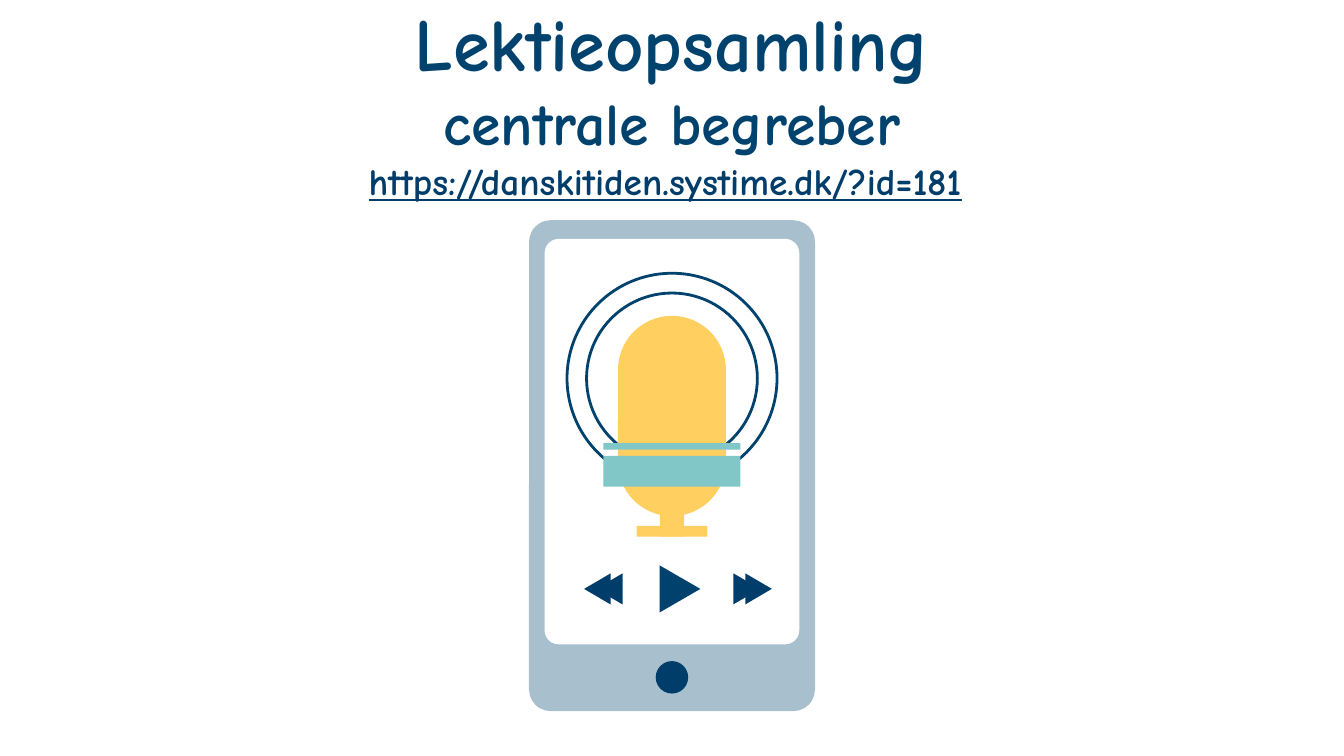
import pptx
import pptx.util
import pptx.dml.color
import pptx.enum.shapes
import pptx.enum.text

Pt = pptx.util.Pt
KIND = pptx.enum.shapes.MSO_SHAPE
MID = 360
HUES = {
    "navy": "00426E",
    "deep": "003D6A",
    "case": "A8BFCE",
    "white": "FFFFFF",
    "mic": "FFCF60",
    "band": "81C7C7",
}


def hue(name):
    return pptx.dml.color.RGBColor.from_string(HUES[name])


def add_form(group, kind, mid, top, width, height, fill=None, line=None, round=None):
    form = group.shapes.add_shape(
        kind, Pt(mid - width / 2), Pt(top), Pt(width), Pt(height))
    form.shadow.inherit = False
    if round is not None:
        form.adjustments[0] = round
    if fill:
        form.fill.solid()
        form.fill.fore_color.rgb = hue(fill)
    else:
        form.fill.background()
    if line:
        form.line.color.rgb = hue(line)
        form.line.width = Pt(1.5)
    else:
        form.line.fill.background()
    return form


def add_arrow(group, mid, base, depth, fill, turn):
    level = 315.5
    form = add_form(group, KIND.ISOSCELES_TRIANGLE, mid, level - depth / 2,
                    base, depth, fill)
    form.rotation = turn


def add_title(slide):
    box = slide.shapes.add_textbox(Pt(24.5), Pt(20.2), Pt(671), Pt(66.2))
    frame = box.text_frame
    frame.word_wrap = True
    frame.vertical_anchor = pptx.enum.text.MSO_ANCHOR.MIDDLE
    frame.margin_left = frame.margin_right = Pt(7.2)
    frame.margin_top = frame.margin_bottom = Pt(7.2)
    para = frame.paragraphs[0]
    para.alignment = pptx.enum.text.PP_ALIGN.CENTER
    para.font.name = "Comic Neue"
    para.font.bold = True
    parts = [
        ("Lektieopsamling", 40, "navy", False),
        ("centrale begreber", 32, "navy", False),
        ("https://danskitiden.systime.dk/?id=181", 20, "deep", True),
        (" ", 20, "navy", False),
    ]
    for spot, (text, size, tint, under) in enumerate(parts):
        if spot in (1, 2):
            para.add_line_break()
        run = para.add_run()
        run.text = text
        run.font.size = Pt(size)
        run.font.color.rgb = hue(tint)
        run.font.underline = under


def add_phone(group):
    add_form(group, KIND.ROUNDED_RECTANGLE, MID, 118, 153.2, 263, "case", round=0.076)
    add_form(group, KIND.ROUNDED_RECTANGLE, MID, 128, 136.4, 217.2, "white", round=0.055)
    for top, size in ((146.4, 112.5), (157, 91.5)):
        add_form(group, KIND.OVAL, MID, top, size, size, line="navy")
    add_form(group, KIND.OVAL, MID, 354.2, 17.4, 17.4, "deep")


def add_mic(group):
    add_form(group, KIND.ROUNDED_RECTANGLE, MID, 169.2, 57.8, 107.3, "mic", round=0.5)
    bars = [
        (272, 13, 15.5, "mic"),
        (281.8, 38, 5.7, "mic"),
        (244.2, 73.4, 16.6, "band"),
        (237.4, 73.4, 3.5, "band"),
    ]
    for top, width, height, fill in bars:
        add_form(group, KIND.RECTANGLE, MID, top, width, height, fill)


def add_keys(group):
    add_arrow(group, 364.3, 25.2, 21.8, "navy", 90)
    for mid, turn in ((400, 90), (406.4, 90), (326.4, 270), (320, 270)):
        add_arrow(group, mid, 16.6, 14.2, "deep", turn)


def main():
    deck = pptx.Presentation()
    deck.slide_width = Pt(720)
    deck.slide_height = Pt(405)
    slide = deck.slides.add_slide(deck.slide_layouts[6])
    add_title(slide)
    group = slide.shapes.add_group_shape()
    add_phone(group)
    add_mic(group)
    add_keys(group)
    deck.save("out.pptx")


if __name__ == "__main__":
    main()
